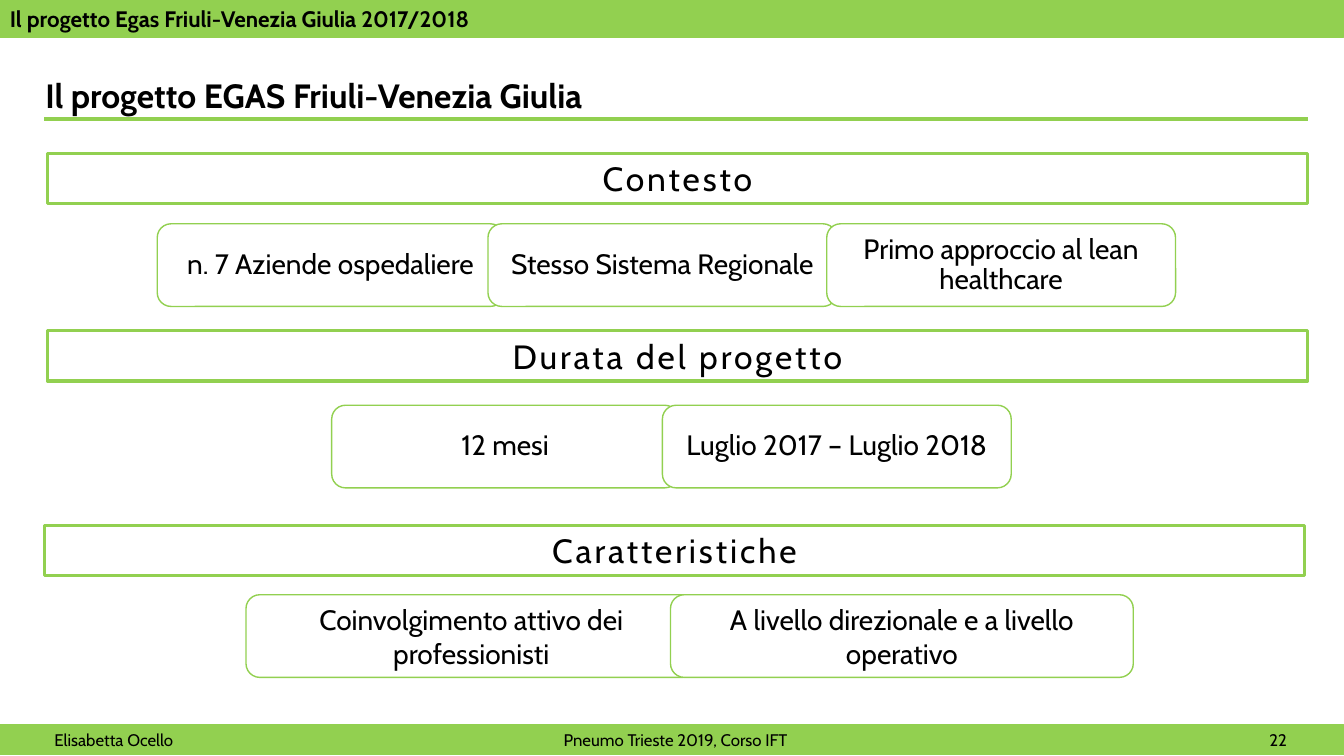
from lxml.etree import SubElement
from pptx import Presentation
from pptx.dml.color import RGBColor
from pptx.enum.shapes import MSO_CONNECTOR, MSO_SHAPE
from pptx.enum.text import MSO_ANCHOR, PP_ALIGN
from pptx.oxml.ns import qn
from pptx.util import Inches, Pt


def color(code):
    return RGBColor.from_string(code)


class Deck:
    FONT = "Cabin"
    GREEN, WHITE, BLACK = "92D050", "FFFFFF", "000000"

    def __init__(self):
        self.prs = Presentation()
        self.prs.slide_width = Inches(13.33)
        self.prs.slide_height = Inches(7.5)
        self.slide = self.prs.slides.add_slide(self.prs.slide_layouts[5])

    def label(self, shape, text, size, align=PP_ALIGN.LEFT, bold=False,
              inset=(0.1, 0.05)):
        """Fill a shape with one styled paragraph and return it."""
        frame = shape.text_frame
        frame.text = text
        frame.word_wrap = True
        frame.vertical_anchor = MSO_ANCHOR.MIDDLE
        frame.margin_left = frame.margin_right = Inches(inset[0])
        frame.margin_top = frame.margin_bottom = Inches(inset[1])
        para = frame.paragraphs[0]
        para.alignment = align
        for run in para.runs:
            run.font.name = self.FONT
            run.font.size = Pt(size)
            run.font.bold = bold
            run.font.color.rgb = color(self.BLACK)
        return para

    def box(self, kind, left, top, width, height, fill, line):
        shape = self.slide.shapes.add_shape(
            kind, Inches(left), Inches(top), Inches(width), Inches(height))
        shape.shadow.inherit = False
        if fill:
            shape.fill.solid()
            shape.fill.fore_color.rgb = color(fill)
        else:
            shape.fill.background()
        shape.line.color.rgb = color(self.GREEN)
        shape.line.width = Pt(line)
        return shape

    def title(self, text):
        title = self.slide.shapes.title
        title.left, title.top = Inches(0.35), Inches(0.69)
        title.width, title.height = Inches(12.62), Inches(0.5)
        self.label(title, text, 24, bold=True)

    def rule(self, left, right, top):
        line = self.slide.shapes.add_connector(
            MSO_CONNECTOR.STRAIGHT, Inches(left), Inches(top),
            Inches(right), Inches(top))
        line.line.color.rgb = color(self.GREEN)
        line.line.width = Pt(2.25)
        SubElement(line._element.spPr, qn("a:effectLst"))

    def heading(self, text, left, top):
        shape = self.box(MSO_SHAPE.RECTANGLE, left, top, 12.5, 0.5, None, 2.25)
        para = self.label(shape, text, 24, PP_ALIGN.CENTER)
        para.runs[0].font._element.set("spc", "210")

    def card(self, text, left, top, width, space):
        shape = self.box(MSO_SHAPE.ROUNDED_RECTANGLE, left, top, width, 0.82,
                         self.WHITE, 1)
        para = self.label(shape, text, 20, PP_ALIGN.CENTER, inset=(0.11, 0.05))
        para.line_spacing = space

    def bar(self, text, top, height, size, bold=False, inset=0.1, tabs=()):
        """Draw a full-width band; tabs are stops measured from the inset."""
        shape = self.box(MSO_SHAPE.RECTANGLE, 0, top, 13.33, height,
                         self.GREEN, 0.75)
        para = self.label(shape, text, size, bold=bold, inset=(inset, 0))
        if tabs:
            stops = SubElement(para._p.get_or_add_pPr(), qn("a:tabLst"))
            for stop in tabs:
                SubElement(stops, qn("a:tab"), pos=str(Inches(stop)), algn="l")


# heading, left, top, card top, line spacing, cards (text, left, width)
SECTIONS = [
    ("Contesto", 0.47, 1.52, 2.22, 0.9, [
        ("n. 7 Aziende ospedaliere", 1.56, 3.44),
        ("Stesso Sistema Regionale", 4.84, 3.46),
        ("Primo approccio al lean healthcare", 8.2, 3.46)]),
    ("Durata del progetto", 0.47, 3.28, 4.02, 0.9, [
        ("12 mesi", 3.29, 3.44),
        ("Luglio 2017 – Luglio 2018", 6.57, 3.46)]),
    ("Caratteristiche", 0.44, 5.21, 5.9, 1.0, [
        ("Coinvolgimento attivo dei professionisti", 2.44, 4.47),
        ("A livello direzionale e a livello operativo", 6.65, 4.59)]),
]


def main():
    deck = Deck()
    deck.title("Il progetto EGAS Friuli-Venezia Giulia")
    deck.rule(0.44, 12.97, 1.18)
    for name, left, top, row, space, cards in SECTIONS:
        deck.heading(name, left, top)
        for text, start, width in cards:
            deck.card(text, start, row, width, space)
    deck.bar("Elisabetta Ocello\tPneumo Trieste 2019, Corso IFT\t22",
             7.19, 0.3, 12, inset=0.54, tabs=(5.05, 12.05))
    deck.bar("Il progetto Egas Friuli-Venezia Giulia 2017/2018",
             0, 0.37, 16, bold=True)
    deck.prs.save("out.pptx")


if __name__ == "__main__":
    main()
